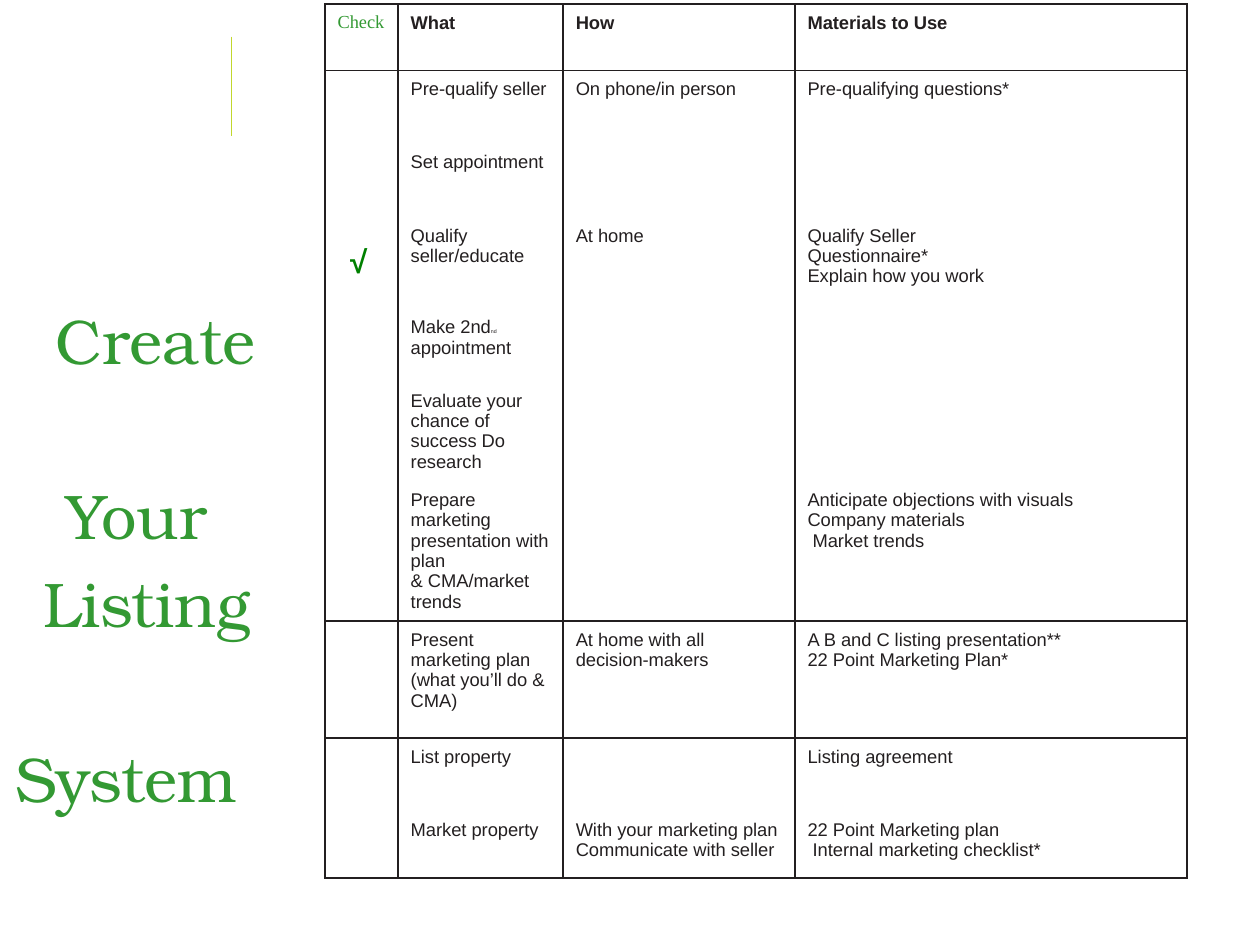
"""Build the listing system checklist slide."""
import pptx
import pptx.util
import pptx.dml.color
import pptx.enum.shapes
import pptx.enum.text
import pptx.oxml
import pptx.oxml.ns

Inches, Pt = pptx.util.Inches, pptx.util.Pt
HUES = {"ink": "231F20", "green": "339933", "check": "008000", "lime": "C1D72D"}
TITLE = [("Create", 0.3, 0, 0), ("Your", 0, 0, 50),
         ("Listing", 0.16, 0, 0), ("System", 0, 0.17, 50)]
COLS = [0.58, 1.31, 1.84, 3.11]
HEAD = ["Check", "What", "How", "Materials to Use"]
GROUPS = [
    [(0.53, HEAD)],
    [
        (0.58, ["", "Pre-qualify seller", "On phone/in person",
                "Pre-qualifying questions*"]),
        (0.58, ["", "Set appointment", "", ""]),
        (0.73, ["", "Qualify seller/educate", "At home",
                "Qualify Seller\nQuestionnaire*\nExplain how you work"]),
        (0.58, ["", [("Make 2nd", 10.5), ("nd ", 3), ("appointment", 10.5)], "", ""]),
        (0.73, ["", "Evaluate your chance of success Do research", "", ""]),
        (0.87, ["", "Prepare marketing presentation with plan\n& CMA/market trends", "",
                "Anticipate objections with visuals\nCompany materials\n Market trends"]),
    ],
    [(0.93, ["", "Present marketing plan\n(what you’ll do & CMA)",
             "At home with all decision-makers",
             "A B and C listing presentation**\n22 Point Marketing Plan*"])],
    [
        (0.58, ["", "List property", "", "Listing agreement"]),
        (0.53, ["", "Market property", "With your marketing plan\nCommunicate with seller",
                "22 Point Marketing plan\n Internal marketing checklist*"]),
    ],
]


def rgb(name):
    return pptx.dml.color.RGBColor.from_string(HUES[name])


def add_run(para, text, size, face, hue, bold=False):
    run = para.add_run()
    run.text = text
    run.font.size, run.font.name, run.font.bold = Pt(size), face, bold
    run.font.color.rgb = rgb(hue)


def set_edges(cell, first, last):
    props = cell._tc.get_or_add_tcPr()
    space = pptx.oxml.ns.nsdecls("a")
    edges = [("L", True), ("R", True), ("T", first), ("B", last)]
    for spot, (side, shown) in enumerate(edges):
        paint = (f'<a:solidFill><a:srgbClr val="{HUES["ink"]}"/></a:solidFill>'
                 if shown else "<a:noFill/>")
        width = Pt(1) if shown else 0
        props.insert(spot, pptx.oxml.parse_xml(
            f'<a:ln{side} {space} w="{width}">{paint}</a:ln{side}>'))


def fill_cell(cell, text, head, check):
    cell.margin_left = cell.margin_right = Inches(0.1)
    cell.margin_top = cell.margin_bottom = Inches(0.07)
    cell.fill.background()
    if not text:
        cell.text_frame.paragraphs[0].font.size = Pt(10.5)
        return
    lines = [[(line, 10.5)] for line in text.split("\n")] if isinstance(text, str) else [text]
    face, hue = ("Times New Roman", "green") if check else ("Arial", "ink")
    for spot, line in enumerate(lines):
        frame = cell.text_frame
        para = frame.add_paragraph() if spot else frame.paragraphs[0]
        for words, size in line:
            add_run(para, words, size, face, hue, head and not check)


def add_grid(slide):
    rows = [(high, texts, spot == 0, spot == len(group) - 1)
            for group in GROUPS for spot, (high, texts) in enumerate(group)]
    grid = slide.shapes.add_table(
        len(rows), len(COLS), Inches(2.58), Inches(0.03),
        Inches(sum(COLS)), Inches(sum(row[0] for row in rows))).table
    grid.horz_banding = False
    for col, wide in zip(grid.columns, COLS):
        col.width = Inches(wide)
    for y, (high, texts, first, last) in enumerate(rows):
        grid.rows[y].height = Inches(high)
        for x, text in enumerate(texts):
            fill_cell(grid.cell(y, x), text, y == 0, x == 0)
            set_edges(grid.cell(y, x), first, last)


def add_title(slide):
    title = slide.shapes.title
    title.left, title.top = Inches(0), Inches(2.25)
    title.width, title.height = Inches(2.17), Inches(2.83)
    frame = title.text_frame
    frame.word_wrap = True
    frame.auto_size = pptx.enum.text.MSO_AUTO_SIZE.NONE
    frame.vertical_anchor = pptx.enum.text.MSO_ANCHOR.TOP
    for spot, (word, left, right, gap) in enumerate(TITLE):
        para = frame.add_paragraph() if spot else frame.paragraphs[0]
        para.alignment = pptx.enum.text.PP_ALIGN.CENTER
        para.line_spacing, para.space_before = Pt(50), Pt(gap)
        props = para._p.get_or_add_pPr()
        props.set("marL", str(Inches(left)))
        props.set("marR", str(Inches(right)))
        add_run(para, word, 36, "TeX Gyre Bonum", "green")


def add_rule(slide):
    rule = slide.shapes.add_connector(
        pptx.enum.shapes.MSO_CONNECTOR.STRAIGHT,
        Inches(1.84), Inches(0.29), Inches(1.84), Inches(1.08))
    rule.line.color.rgb, rule.line.width = rgb("lime"), Pt(0.75)
    rule._element.spPr.append(pptx.oxml.parse_xml(
        f'<a:effectLst {pptx.oxml.ns.nsdecls("a")}/>'))


def add_tick(slide):
    box = slide.shapes.add_textbox(Inches(2.68), Inches(1.87), Inches(0.34), Inches(0.4))
    box.text_frame.word_wrap = False
    box.text_frame.auto_size = pptx.enum.text.MSO_AUTO_SIZE.SHAPE_TO_FIT_TEXT
    add_run(box.text_frame.paragraphs[0], "√", 18, "Arial", "check", True)


def main():
    deck = pptx.Presentation()
    deck.slide_width, deck.slide_height = Inches(10), Inches(7.5)
    slide = deck.slides.add_slide(deck.slide_layouts[5])
    for add in (add_rule, add_grid, add_title, add_tick):
        add(slide)
    deck.save("out.pptx")


if __name__ == "__main__":
    main()
